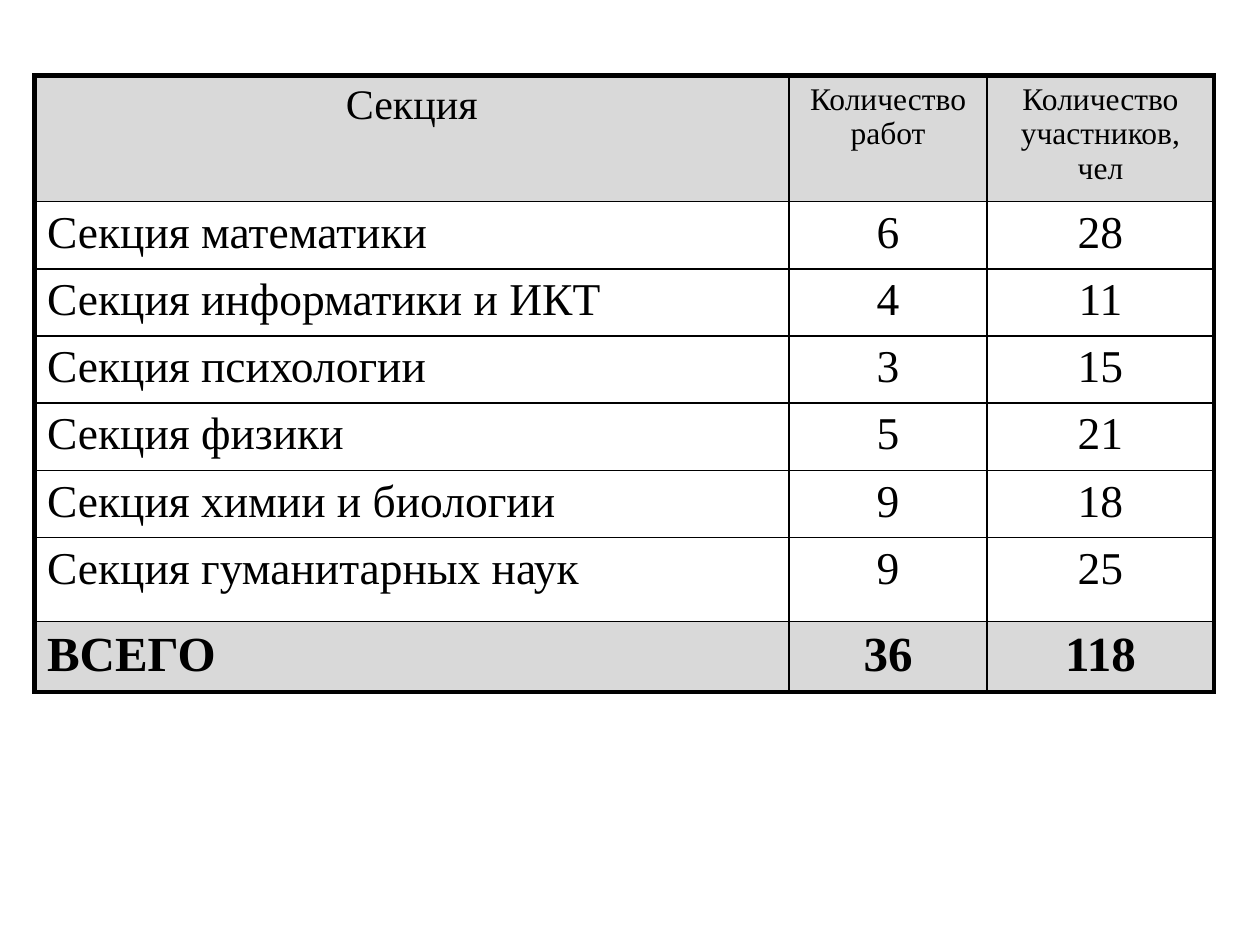
from lxml.etree import SubElement
from pptx import Presentation
from pptx.dml.color import RGBColor
from pptx.enum.text import PP_ALIGN
from pptx.oxml.ns import qn
from pptx.util import Pt

# Content
HEADER = ("Секция", "Количество работ", "Количество\nучастников, чел")
SECTIONS = [
    ("Секция математики", "6", "28"),
    ("Секция информатики и ИКТ", "4", "11"),
    ("Секция психологии", "3", "15"),
    ("Секция физики", "5", "21"),
    ("Секция химии и биологии", "9", "18"),
    ("Секция гуманитарных наук", "9", "25"),
]
TOTAL = ("ВСЕГО", "36", "118")
ROWS = [HEADER, *SECTIONS, TOTAL]

# Style and geometry, in points
COLORS = {"text": "000000", "border": "000000", "band": "D9D9D9"}
FONT = "Times New Roman"
LEFT, TOP = 19.7, 43.2
COL_WIDTHS = (431.2, 113.2, 129.6)
ROW_HEIGHTS = [72] + [38.4] * 5 + [48, 40.4]
THIN, THICK = 1, 3
LAST_ROW, LAST_COL = len(ROWS) - 1, len(COL_WIDTHS) - 1


def font_size(row, col):
    if row == 0:
        return 24 if col == 0 else 18
    return 28 if row == LAST_ROW else 26


def set_borders(cell, widths):
    tc_pr = cell._tc.get_or_add_tcPr()
    for i, (side, width) in enumerate(widths.items()):
        ln = tc_pr.makeelement(qn(f"a:{side}"), {"w": str(Pt(width))})
        fill = SubElement(ln, qn("a:solidFill"))
        SubElement(fill, qn("a:srgbClr"), val=COLORS["border"])
        tc_pr.insert(i, ln)


def format_cell(cell, row, col):
    cell.text = ROWS[row][col]
    for p in cell.text_frame.paragraphs:
        centred = row == 0 or col > 0
        p.alignment = PP_ALIGN.CENTER if centred else PP_ALIGN.LEFT
        for r in p.runs:
            r.font.name = FONT
            r.font.size = Pt(font_size(row, col))
            r.font.bold = row == LAST_ROW
            r.font.color.rgb = RGBColor.from_string(COLORS["text"])
    if row in (0, LAST_ROW):
        cell.fill.solid()
        cell.fill.fore_color.rgb = RGBColor.from_string(COLORS["band"])
    else:
        cell.fill.background()
    # Thick frame outside, thin grid inside
    set_borders(cell, {
        "lnL": THICK if col == 0 else THIN,
        "lnR": THICK if col == LAST_COL else THIN,
        "lnT": THICK if row == 0 else THIN,
        "lnB": THICK if row == LAST_ROW else THIN,
    })


def main():
    prs = Presentation()
    prs.slide_width, prs.slide_height = Pt(720), Pt(540)
    slide = prs.slides.add_slide(prs.slide_layouts[6])

    # Table of sections
    s = slide.shapes.add_table(len(ROWS), len(COL_WIDTHS), Pt(LEFT), Pt(TOP),
                               Pt(sum(COL_WIDTHS)), Pt(sum(ROW_HEIGHTS)))
    table = s.table
    table.horz_banding = False
    table.first_row = False
    for column, width in zip(table.columns, COL_WIDTHS):
        column.width = Pt(width)
    for row, height in zip(table.rows, ROW_HEIGHTS):
        row.height = Pt(height)
    for row in range(len(ROWS)):
        for col in range(len(COL_WIDTHS)):
            format_cell(table.cell(row, col), row, col)

    prs.save("out.pptx")


if __name__ == "__main__":
    main()
